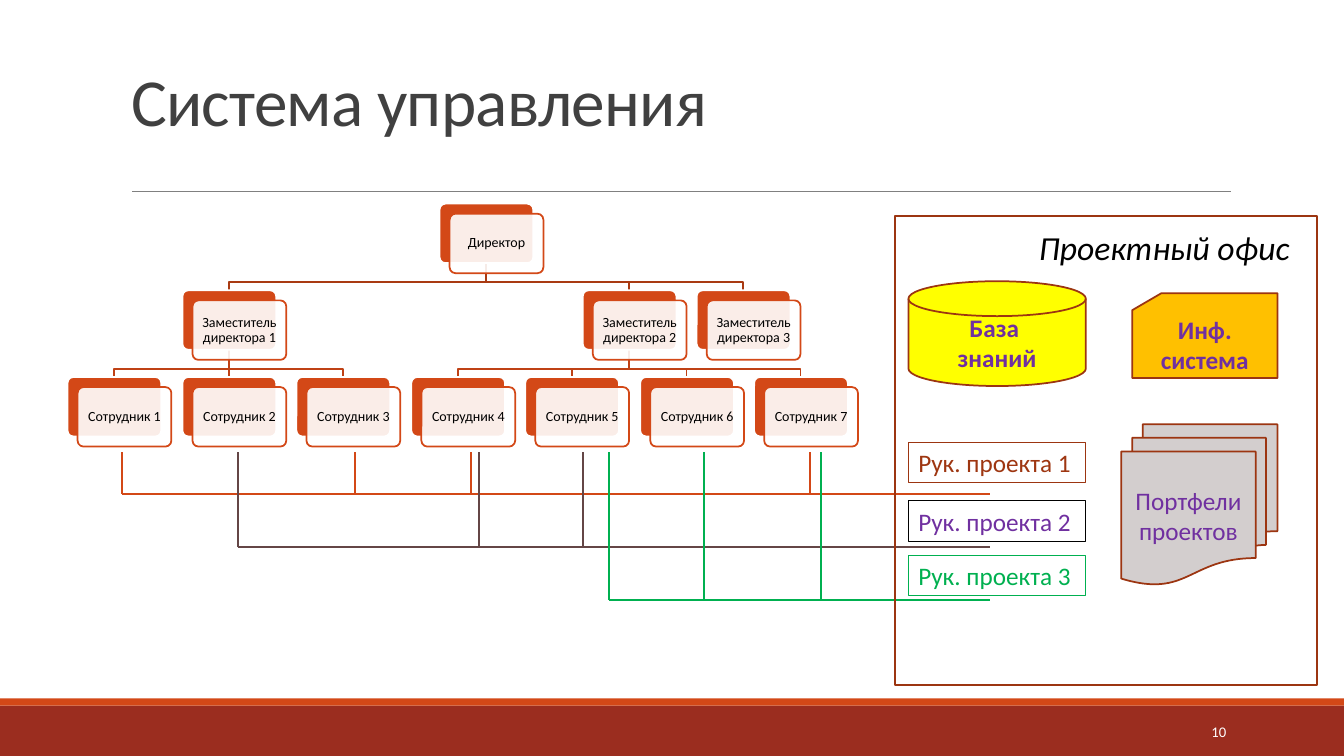
from dataclasses import dataclass

from lxml import etree
from pptx import Presentation, util as u
from pptx.dml.color import RGBColor
from pptx.enum import shapes, text
from pptx.oxml.ns import qn

PX = 9144  # EMU in one px, 100 px to the inch
FONT = "Calibri"
COLORS = {
    "white": "FFFFFF", "black": "000000", "title": "404040", "rule": "808080",
    "footer": "9B2D1F", "accent": "D34817", "top_link": "A93A12", "low_link": "BF4115",
    "border": "9C3511", "manager": "9E3611", "brown": "644646", "green": "00B050",
    "purple": "7030A0", "yellow": "FFFF00", "amber": "FFC000", "grey": "D3CECE",
}
KINDS = shapes.MSO_SHAPE
ALIGN = text.PP_ALIGN
ANCHOR = text.MSO_ANCHOR

# Organisation chart grid
CHART_LEFT, CHART_TOP = 67, 202
COLUMN_STEP, LEVEL_STEP = 113.54, 86
CARD_WIDTH, CARD_HEIGHT, CARD_SHIFT = 93, 59, 10
BUS_END, BUS_TOP = 982, 448


@dataclass(frozen=True)
class Box:
    left: int
    top: int
    width: int
    height: int

    def emu(self) -> tuple[int, ...]:
        return tuple(u.Emu(v * PX) for v in (self.left, self.top, self.width, self.height))


@dataclass(frozen=True)
class TextStyle:
    size: float
    color: str
    bold: bool = False
    italic: bool = False
    align: ALIGN = ALIGN.LEFT
    anchor: ANCHOR = ANCHOR.TOP


@dataclass(frozen=True)
class Post:
    label: str
    column: float
    level: int
    boss: "Post | None" = None

    @property
    def left(self) -> int:
        return round(CHART_LEFT + COLUMN_STEP * self.column)

    @property
    def top(self) -> int:
        return CHART_TOP + LEVEL_STEP * self.level

    @property
    def center(self) -> int:
        return self.left + CARD_WIDTH // 2


@dataclass(frozen=True)
class ProjectBus:
    y: int
    color: str
    drops: tuple[int, ...]


@dataclass(frozen=True)
class Item:
    kind: KINDS
    box: Box
    fill: str | None
    line_width: float
    line_color: str
    label: str
    style: TextStyle


def rgb(name: str) -> RGBColor:
    return RGBColor.from_string(COLORS[name])


def write(shape, label: str, style: TextStyle) -> None:
    frame = shape.text_frame
    frame.text = label
    frame.word_wrap = True
    frame.vertical_anchor = style.anchor
    for paragraph in frame.paragraphs:
        paragraph.alignment = style.align
        for run in paragraph.runs:
            run.font.name, run.font.size = FONT, u.Pt(style.size)
            run.font.bold, run.font.italic = style.bold, style.italic
            run.font.color.rgb = rgb(style.color)


def add_box(canvas, kind: KINDS, box: Box, fill: str | None,
            line: str | None = None, width: float = 1.25):
    shape = canvas.add_shape(kind, *box.emu())
    shape.shadow.inherit = False
    if fill:
        shape.fill.solid()
        shape.fill.fore_color.rgb = rgb(fill)
    else:
        shape.fill.background()
    if line:
        shape.line.color.rgb = rgb(line)
        shape.line.width = u.Pt(width)
    else:
        shape.line.fill.background()
    return shape


def add_line(canvas, x1: int, y1: int, x2: int, y2: int, color: str, width: float) -> None:
    ends = [u.Emu(v * PX) for v in (x1, y1, x2, y2)]
    line = canvas.add_connector(shapes.MSO_CONNECTOR.STRAIGHT, *ends)
    line.line.color.rgb = rgb(color)
    line.line.width = u.Pt(width)
    etree.SubElement(line._element.spPr, qn("a:effectLst"))


def add_text(canvas, box: Box, label: str, style: TextStyle) -> None:
    write(canvas.add_textbox(*box.emu()), label, style)


def add_link(canvas, post: Post) -> None:
    start = post.boss.top + CARD_HEIGHT
    bend = start + 19
    builder = canvas.build_freeform(post.boss.center, start, scale=PX)
    builder.add_line_segments(
        [(post.boss.center, bend), (post.center, bend), (post.center, post.top)], close=False)
    link = builder.convert_to_shape()
    link.shadow.inherit = False
    link.fill.background()
    link.line.color.rgb = rgb("top_link" if post.level == 1 else "low_link")
    link.line.width = u.Pt(1.25)


def add_card(canvas, post: Post) -> None:
    back = Box(post.left, post.top, CARD_WIDTH, CARD_HEIGHT)
    front = Box(post.left + CARD_SHIFT, post.top + CARD_SHIFT, CARD_WIDTH, CARD_HEIGHT)
    for box, fill, line in ((back, "accent", "white"), (front, "white", "accent")):
        card = add_box(canvas, KINDS.ROUNDED_RECTANGLE, box, fill, line)
        card.adjustments[0] = 0.1
    color = card._element.spPr.find(qn("a:solidFill")).find(qn("a:srgbClr"))
    etree.SubElement(color, qn("a:alpha"), val="90000")
    write(card, post.label, TextStyle(10, "black", align=ALIGN.CENTER, anchor=ANCHOR.MIDDLE))
    frame = card.text_frame
    frame.margin_left = frame.margin_right = u.Emu(4 * PX)
    frame.margin_top = frame.margin_bottom = u.Emu(4 * PX)
    frame.paragraphs[0].line_spacing = 0.9
    frame.paragraphs[0].space_after = u.Pt(3.5)


def add_bus(canvas, bus: ProjectBus) -> None:
    add_line(canvas, bus.drops[0], bus.y, BUS_END, bus.y, bus.color, 1.5)
    for x in bus.drops:
        add_line(canvas, x, bus.y, x, BUS_TOP, bus.color, 1.5)


def add_item(canvas, item: Item) -> None:
    shape = add_box(canvas, item.kind, item.box, item.fill, item.line_color, item.line_width)
    write(shape, item.label, item.style)


director = Post("Директор", 3.25, 0)
deputies = [Post(f"Заместитель директора {number}", column, 1, director)
            for number, column in enumerate((1, 4.5, 5.5), 1)]
staff = [Post(f"Сотрудник {i + 1}", i, 2, deputies[0 if i < 3 else 1]) for i in range(7)]
BUSES = [
    ProjectBus(490, "accent", (121, 352, 467, 803)),
    ProjectBus(543, "brown", (236, 475, 578)),
    ProjectBus(595, "green", (604, 698, 814)),
]
MANAGERS = [
    Item(KINDS.RECTANGLE, Box(901, top, 176, 40), None, 0.75, line,
         f"Рук. проекта {number}", TextStyle(18, color))
    for number, (top, line, color) in enumerate(
        ((439, "border", "manager"), (497, "black", "purple"), (551, "green", "green")), 1)
]
STRONG = TextStyle(18, "purple", bold=True, align=ALIGN.CENTER, anchor=ANCHOR.MIDDLE)
PLAIN = TextStyle(18, "purple", align=ALIGN.CENTER, anchor=ANCHOR.MIDDLE)
RESOURCES = [
    Item(KINDS.FLOWCHART_MAGNETIC_DISK, Box(901, 279, 176, 104), "yellow", 1.25, "border",
         "База \nзнаний", STRONG),
    Item(KINDS.FLOWCHART_CARD, Box(1123, 291, 144, 84), "amber", 1.25, "border",
         "Инф.\nсистема", STRONG),
    Item(KINDS.FLOWCHART_MULTIDOCUMENT, Box(1112, 421, 155, 159), "grey", 1.25, "border",
         "Портфели проектов", PLAIN),
]


def main() -> None:
    presentation = Presentation()
    presentation.slide_width, presentation.slide_height = u.Inches(13.33), u.Inches(7.5)
    slide = presentation.slides.add_slide(presentation.slide_layouts[5])
    canvas = slide.shapes

    # Footer bands, title and rule
    add_box(canvas, KINDS.RECTANGLE, Box(0, 700, 1333, 50), "footer")
    add_box(canvas, KINDS.RECTANGLE, Box(0, 693, 1333, 7), "accent")
    add_line(canvas, 131, 190, 1221, 190, "rule", 0.5)
    title = canvas.title
    title.left, title.top, title.width, title.height = Box(120, 31, 1100, 113).emu()
    write(title, "Система управления", TextStyle(48, "title", anchor=ANCHOR.BOTTOM))
    title.text_frame.paragraphs[0].line_spacing = 0.85
    title.text_frame.paragraphs[0].runs[0].font._element.set("spc", "-50")
    add_text(canvas, Box(1083, 706, 143, 40), "10",
             TextStyle(10.5, "white", align=ALIGN.RIGHT, anchor=ANCHOR.MIDDLE))

    # Organisation chart
    chart = canvas.add_group_shape().shapes
    for post in staff + deputies:
        add_link(chart, post)
    for post in [director] + deputies + staff:
        add_card(chart, post)

    # Project lines
    for bus in BUSES:
        add_bus(canvas.add_group_shape().shapes, bus)

    # Project office
    add_box(canvas, KINDS.RECTANGLE, Box(888, 214, 418, 466), None, "border")
    add_text(canvas, Box(988, 220, 301, 50), "Проектный офис",
             TextStyle(24, "black", italic=True, align=ALIGN.RIGHT))
    for item in MANAGERS + RESOURCES:
        add_item(canvas, item)

    presentation.save("out.pptx")


if __name__ == "__main__":
    main()
